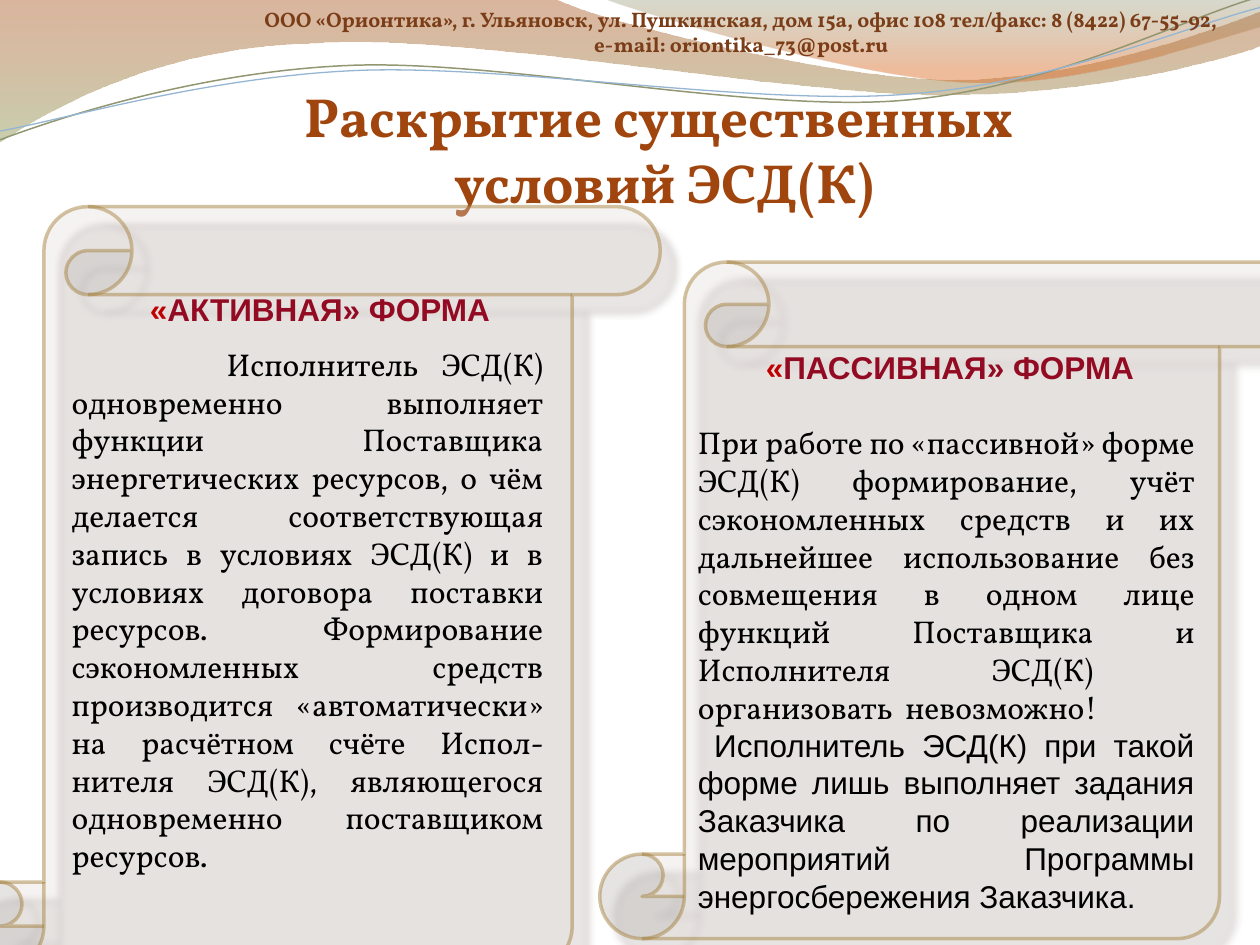
from lxml import etree
from pptx import Presentation
from pptx.dml.color import RGBColor
from pptx.enum import shapes, text
from pptx.oxml import ns, parse_xml
from pptx.util import Inches, Pt

COLORS = {
    "title": "9F450D", "header": "7B3D17", "quote": "C00000",
    "heading": "930B22", "body": "000000", "scroll": "E3DCD9",
    "edge": "A17C36", "shadow": "594740", "rust": "AF5C29",
    "sage": "9DA66B", "olive": "7D835B", "orange": "DD6B24",
    "green_line": "929772", "blue_line": "94B6D2",
}
SERIF, SANS = "Vollkorn", "Arial"
BROAD_WAVE = [
    [(0, 0)], [(4.4, -0.01)],
    [(4.76, 0.17), (6.64, 0.63), (7.58, 0.63)],
    [(8.53, 0.63), (9.58, 0.26), (10, 0.09)], [(10.01, 0.36)],
    [(9.83, 0.44), (8.7, 0.76), (7.46, 0.75)],
    [(6.22, 0.75), (3.82, 0.28), (2.57, 0.34)],
    [(1.29, 0.36), (0.46, 0.83), (-0.01, 1.13)], [(0, 0)],
]
RIGHT_WAVE = [
    [(4.79, -0.01)],
    [(5.09, 0.11), (6.82, 0.62), (7.69, 0.65)],
    [(8.56, 0.69), (9.61, 0.32), (10, 0.21)], [(10, 0)], [(4.79, -0.01)],
]
GREEN_CURVE = [
    [(0, 1.11)],
    [(0.48, 0.93), (1.58, 0.57), (2.77, 0.52)],
    [(3.95, 0.47), (5.93, 0.89), (7.13, 0.8)],
    [(8.33, 0.71), (9.38, 0.15), (9.98, -0.02)],
]
BLUE_CURVE = [
    [(0, 1.04)],
    [(0.47, 0.96), (1.64, 0.61), (2.83, 0.56)],
    [(4.03, 0.51), (5.97, 0.84), (7.17, 0.75)],
    [(8.36, 0.67), (9.41, 0.21), (10, 0.06)],
]
ACTIVE_TEXT = (
    "Исполнитель ЭСД(К) одновременно выполняет функции Поставщика "
    "энергетических ресурсов, о чём делается соответствующая запись в "
    "условиях ЭСД(К) и в условиях договора поставки ресурсов. "
    "Формирование сэкономленных средств производится «автоматически» на "
    "расчётном счёте Испол- нителя ЭСД(К), являющегося одновременно "
    "поставщиком ресурсов."
)
PASSIVE_TEXT = (
    "При работе по «пассивной» форме ЭСД(К) формирование, учёт "
    "сэкономленных средств и их дальнейшее использование без совмещения в "
    "одном лице функций Поставщика и Исполнителя ЭСД(К)  организовать  "
    "невозможно!"
)
TASK_TEXT = (
    "Исполнитель ЭСД(К) при такой форме лишь выполняет задания Заказчика по "
    "реализации мероприятий Программы энергосбережения Заказчика."
)


def rgb(name):
    """Return the named colour."""
    return RGBColor.from_string(COLORS[name])


def set_opacity(fill, percent):
    """Make a solid fill partly transparent."""
    color = fill._xPr.find(".//" + ns.qn("a:srgbClr"))
    etree.SubElement(color, ns.qn("a:alpha")).set("val", str(percent * 1000))


def add_outline(s, segments, close):
    """Add a freeform whose three-point segments are cubic curves."""
    points = [(Inches(x), Inches(y)) for segment in segments for x, y in segment]
    builder = s.shapes.build_freeform(*points[0])
    builder.add_line_segments(points[1:], close=close)
    sp = builder.convert_to_shape()
    sp.shadow.inherit = False
    lines = iter(list(sp._element.iter(ns.qn("a:lnTo"))))
    for segment in segments[1:]:
        group = [next(lines) for _ in segment]
        if len(group) == 3:
            curve = etree.Element(ns.qn("a:cubicBezTo"))
            group[0].addprevious(curve)
            for line in group:
                curve.append(line[0])
                line.getparent().remove(line)
    return sp


def add_wave(s, segments, stops):
    """Add a wave with a downward transparent gradient."""
    sp = add_outline(s, segments, True)
    sp.line.fill.background()
    sp.fill.background()
    marks = "".join(
        f'<a:gs pos="{pos * 1000}"><a:srgbClr val="{COLORS[color]}">'
        f'<a:alpha val="{alpha * 1000}"/></a:srgbClr></a:gs>'
        for pos, color, alpha in stops)
    gradient = parse_xml(f'<a:gradFill {ns.nsdecls("a")} rotWithShape="1"><a:gsLst>{marks}'
                         '</a:gsLst><a:lin ang="5400000" scaled="0"/></a:gradFill>')
    pr = sp._element.spPr
    pr.replace(pr.find(ns.qn("a:noFill")), gradient)


def add_curve(s, segments, color, width):
    """Add an open thin curve."""
    sp = add_outline(s, segments, False)
    sp.fill.background()
    sp.line.color.rgb = rgb(color)
    sp.line.width = Pt(width)


def add_scroll(s, box, opacity):
    """Add a translucent scroll with a soft shadow."""
    sp = s.shapes.add_shape(shapes.MSO_SHAPE.VERTICAL_SCROLL, *map(Inches, box))
    sp.shadow.inherit = False
    sp.fill.solid()
    sp.fill.fore_color.rgb = rgb("scroll")
    set_opacity(sp.fill, opacity)
    sp.line.color.rgb = rgb("edge")
    sp.line.width = Pt(2)
    set_opacity(sp.line.fill, 46)
    effects = sp._element.spPr.find(ns.qn("a:effectLst"))
    effects.append(parse_xml(
        f'<a:outerShdw {ns.nsdecls("a")} blurRad="{Pt(4)}" dist="{Pt(14)}" dir="3000000" '
        f'algn="tl" rotWithShape="0"><a:srgbClr val="{COLORS["shadow"]}">'
        '<a:alpha val="42000"/></a:srgbClr></a:outerShdw>'))


def add_run(p, content, size, font, color, bold=False):
    """Add a formatted run."""
    r = p.add_run()
    r.text = content
    r.font.size, r.font.name, r.font.bold = Pt(size), font, bold
    r.font.color.rgb = rgb(color)


def add_paragraph(tf, align, left=0, first=0):
    """Start a paragraph, using the empty first one when available."""
    p = tf.paragraphs[0] if not tf.paragraphs[0].runs else tf.add_paragraph()
    p.alignment = align
    pr = p._p.get_or_add_pPr()
    pr.set("marL", str(Inches(left)))
    pr.set("indent", str(Inches(first)))
    return p


def add_text_box(s, box):
    """Add a wrapping text box and return its frame."""
    tf = s.shapes.add_textbox(*map(Inches, box)).text_frame
    tf.word_wrap = True
    return tf


def add_form(s, box, heading, gap, shift, paragraphs):
    """Add a form's heading and justified paragraphs."""
    tf = add_text_box(s, box)
    p = add_paragraph(tf, text.PP_ALIGN.CENTER, left=shift)
    p.space_after = Pt(gap)
    add_run(p, "«", 18, SANS, "quote", True)
    add_run(p, heading, 18, SANS, "heading", True)
    for content, font, first in paragraphs:
        p = add_paragraph(tf, text.PP_ALIGN.JUSTIFY, first=first)
        p.line_spacing = Pt(21.6)
        add_run(p, content, 18, font, "body")


def add_title(s):
    """Place and fill the title above the waves."""
    sp = s.shapes.title
    s.shapes._spTree.append(sp._element)
    sp.left, sp.top, sp.width, sp.height = map(Inches, (1.61, 0.68, 7.24, 1.02))
    tf = sp.text_frame
    tf.auto_size = text.MSO_AUTO_SIZE.NONE
    tf.vertical_anchor = text.MSO_ANCHOR.BOTTOM
    tf.margin_left = tf.margin_right = tf.margin_bottom = 0
    p = add_paragraph(tf, text.PP_ALIGN.CENTER)
    add_run(p, "Раскрытие существенных", 31.5, SERIF, "title", True)
    p.add_line_break()
    add_run(p, " условий ЭСД(К)", 31.5, SERIF, "title", True)


def add_header(s):
    """Add the contact lines at the top."""
    tf = add_text_box(s, (1.8, 0, 8.2, 0.5))
    for line in ("ООО «Орионтика», г. Ульяновск, ул. Пушкинская, дом 15а, офис 108 "
                 "тел/факс: 8 (8422) 67-55-92, ", "e-mail: oriontika_73@post.ru "):
        add_run(add_paragraph(tf, text.PP_ALIGN.CENTER), line, 12, SERIF, "header", True)


def main():
    """Build the slide and save it."""
    prs = Presentation()
    prs.slide_width, prs.slide_height = Inches(10), Inches(7.5)
    s = prs.slides.add_slide(prs.slide_layouts[5])
    add_wave(s, BROAD_WAVE, [(0, "rust", 45), (100, "sage", 55)])
    add_wave(s, RIGHT_WAVE, [(0, "olive", 30), (80, "orange", 45)])
    add_curve(s, GREEN_CURVE, "green_line", 0.85)
    add_curve(s, BLUE_CURVE, "blue_line", 0.75)
    add_title(s)
    add_scroll(s, (-0.35, 1.64, 5.59, 6.06), 33)
    add_form(s, (0.47, 2.25, 3.94, 5.08), "АКТИВНАЯ» ФОРМА", 9.9, 0.2,
             [(ACTIVE_TEXT, SERIF, 1.23)])
    add_header(s)
    add_scroll(s, (4.76, 2.08, 5.59, 5.37), 34)
    add_form(s, (5.44, 2.71, 4.14, 4.65), "ПАССИВНАЯ» ФОРМА", 21.6, 0.06,
             [(PASSIVE_TEXT, SERIF, 0), (TASK_TEXT, SANS, 0.13)])
    prs.save("out.pptx")


if __name__ == "__main__":
    main()
